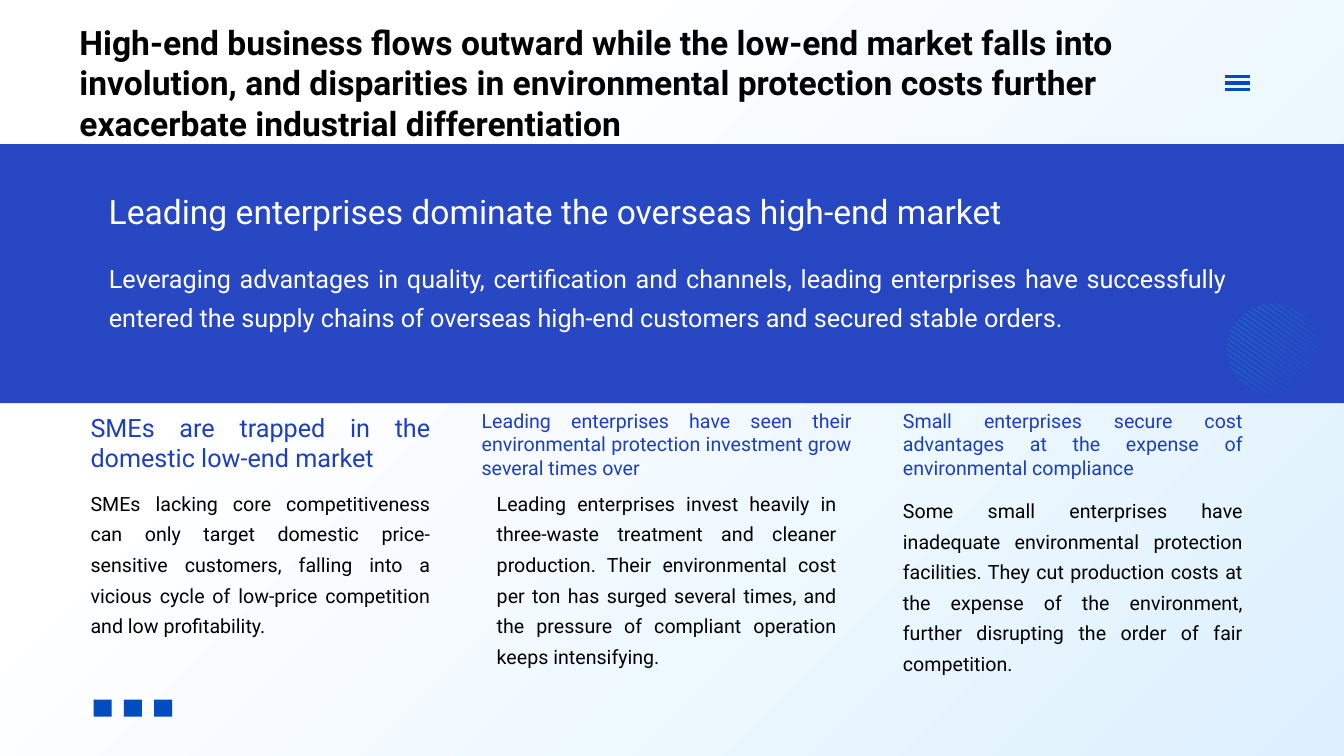
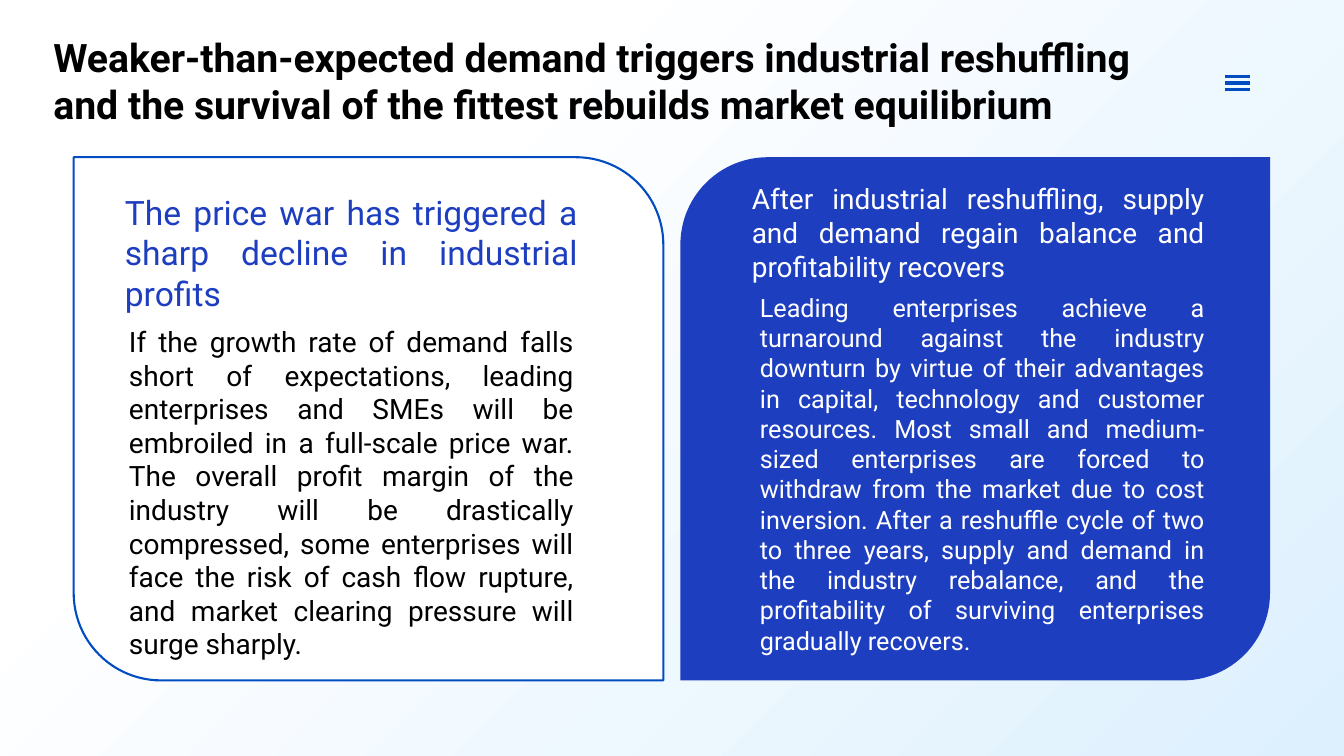
import pptx
import pptx.util
import pptx.dml.color
import pptx.enum.shapes
import pptx.enum.text
import pptx.oxml
import pptx.oxml.ns
import math

Pt = pptx.util.Pt
SHAPES = pptx.enum.shapes.MSO_SHAPE
TEXT = pptx.enum.text

FONT = "Roboto"
NAVY, BLUE, CYAN = "1D3EBF", "004CC0", "00B0F0"
BLACK, WHITE, ICE = "000000", "FFFFFF", "DDF0FE"
JUSTIFY = TEXT.PP_ALIGN.JUSTIFY
MIDDLE = TEXT.MSO_ANCHOR.MIDDLE

# Text formats
TITLE = dict(bold=True, color=BLACK)
HEADING = dict(align=JUSTIFY, anchor=MIDDLE)
BODY = dict(align=JUSTIFY)
OPEN_BODY = dict(BODY, spacing=1.3)

MARKET_TITLE = (
    "High-end business flows outward while the low-end market falls into involution, "
    "and disparities in environmental protection costs further exacerbate "
    "industrial differentiation"
)
BAND_HEADING = "Leading enterprises dominate the overseas high-end market"
BAND_BODY = (
    "Leveraging advantages in quality, certification and channels, leading enterprises "
    "have successfully entered the supply chains of overseas high-end customers and "
    "secured stable orders."
)
# Heading, its size, box top, box height and extra width per side; body and its top, height
COLUMNS = [
    dict(
        heading="SMEs are trapped in the domestic low-end market",
        heading_size=18, heading_top=290.2, heading_height=51.1, widen=0,
        body="SMEs lacking core competitiveness can only target domestic price-sensitive "
             "customers, falling into a vicious cycle of low-price competition and low "
             "profitability.",
        body_top=342.7, body_height=117.4,
    ),
    dict(
        heading="Leading enterprises have seen their environmental protection investment "
                "grow several times over",
        heading_size=14, heading_top=288, heading_height=58.3, widen=10.8,
        body="Leading enterprises invest heavily in three-waste treatment and cleaner "
             "production. Their environmental cost per ton has surged several times, and "
             "the pressure of compliant operation keeps intensifying.",
        body_top=342.7, body_height=139,
    ),
    dict(
        heading="Small enterprises secure cost advantages at the expense of environmental "
                "compliance",
        heading_size=14, heading_top=288, heading_height=58.3, widen=0,
        body="Some small enterprises have inadequate environmental protection facilities. "
             "They cut production costs at the expense of the environment, further "
             "disrupting the order of fair competition.",
        body_top=347.8, body_height=139,
    ),
]
RESHUFFLE_TITLE = [
    "Weaker-than-expected demand triggers industrial reshuffling",
    "and the survival of the fittest rebuilds market equilibrium",
]
# Boxes are left, top, width, height
CARDS = [
    dict(
        left=486, flips=("flipH", "flipV"), fill=NAVY, line=None,
        heading="After industrial reshuffling, supply and demand regain balance and "
                "profitability recovers",
        heading_box=(529.9, 126, 337.7, 79.9),
        heading_format=dict(HEADING, size=20, color=WHITE),
        body="Leading enterprises achieve a turnaround against the industry downturn by "
             "virtue of their advantages in capital, technology and customer resources. "
             "Most small and medium-sized enterprises are forced to withdraw from the "
             "market due to cost inversion. After a reshuffle cycle of two to three years, "
             "supply and demand in the industry rebalance, and the profitability of "
             "surviving enterprises gradually recovers.",
        body_box=(535.7, 205.2, 331.9, 268.6),
        body_format=dict(BODY, size=18, color=WHITE),
    ),
    dict(
        left=52.6, flips=("flipV",), fill=WHITE, line=BLUE,
        heading="The price war has triggered a sharp decline in industrial profits",
        heading_box=(82.1, 133.2, 337.7, 94.3),
        heading_format=dict(HEADING, size=24, color=NAVY),
        body="If the growth rate of demand falls short of expectations, leading enterprises "
             "and SMEs will be embroiled in a full-scale price war. The overall profit "
             "margin of the industry will be drastically compressed, some enterprises will "
             "face the risk of cash flow rupture, and market clearing pressure will surge "
             "sharply.",
        body_box=(85, 228.2, 331.9, 249.8),
        body_format=dict(BODY, size=20, color=BLACK),
    ),
]


def rgb(color):
    return pptx.dml.color.RGBColor.from_string(color)


def set_gradient(properties, stops, angle):
    """Replace the solid fill in properties; stops are (percent, colour, opacity percent)."""
    marks = "".join(
        f'<a:gs pos="{place * 1000}"><a:srgbClr val="{color}">'
        f'<a:alpha val="{opacity * 1000}"/></a:srgbClr></a:gs>'
        for place, color, opacity in stops
    )
    gradient = pptx.oxml.parse_xml(
        f'<a:gradFill rotWithShape="1" {pptx.oxml.ns.nsdecls("a")}><a:gsLst>{marks}</a:gsLst>'
        f'<a:lin ang="{angle * 60000}" scaled="0"/></a:gradFill>'
    )
    solid = properties.find(pptx.oxml.ns.qn("a:solidFill"))
    properties.replace(solid, gradient)


def style_shape(shape, fill, line=None, width=1.5):
    shape.shadow.inherit = False
    shape.fill.solid()
    shape.fill.fore_color.rgb = rgb(fill)
    if line:
        shape.line.color.rgb = rgb(line)
        shape.line.width = Pt(width)
    else:
        shape.line.fill.background()


def add_block(slide, kind, box, fill, line=None):
    block = slide.shapes.add_shape(kind, *map(Pt, box))
    style_shape(block, fill, line)
    return block


def add_text(slide, box, paragraphs, size, color, bold=None, align=None,
             anchor=TEXT.MSO_ANCHOR.TOP, spacing=None):
    frame = slide.shapes.add_textbox(*map(Pt, box)).text_frame
    frame_format = dict(
        word_wrap=True, auto_size=TEXT.MSO_AUTO_SIZE.SHAPE_TO_FIT_TEXT, vertical_anchor=anchor
    )
    for name, value in frame_format.items():
        setattr(frame, name, value)
    for index, words in enumerate(paragraphs):
        paragraph = frame.add_paragraph() if index else frame.paragraphs[0]
        paragraph.alignment = align
        paragraph.line_spacing = spacing
        run = paragraph.add_run()
        run.text = words
        for name, value in dict(name=FONT, size=Pt(size), bold=bold).items():
            setattr(run.font, name, value)
        run.font.color.rgb = rgb(color)


def add_menu_icon(slide):
    for row in range(3):
        y = Pt(54.7 + 4.7 * row)
        bar = slide.shapes.add_connector(
            pptx.enum.shapes.MSO_CONNECTOR.STRAIGHT, Pt(874.8), y, Pt(892.8), y
        )
        bar.line.color.rgb = rgb(BLUE)
        bar.line.width = Pt(2.5)
        bar._element.spPr.append(
            pptx.oxml.parse_xml(f'<a:effectLst {pptx.oxml.ns.nsdecls("a")}/>')
        )


def add_hatched_disc(slide, center_x, center_y, radius, stripes=21, tilt=35):
    """Cut a disc into evenly spaced stripes, drawn level and then tilted."""
    pitch = 2 * radius / stripes
    units = 100  # drawing units in a point
    builder = None
    for stripe in range(stripes):
        middle = (stripe - stripes // 2) * pitch
        upper, lower = middle - pitch / 4, middle + pitch / 4
        reach_up, reach_down = (math.sqrt(radius**2 - edge**2) for edge in (upper, lower))
        corners = [
            ((center_x + x) * units, (center_y + y) * units)
            for x, y in ((-reach_up, upper), (reach_up, upper),
                         (reach_down, lower), (-reach_down, lower))
        ]
        if builder is None:
            builder = slide.shapes.build_freeform(*corners[0], scale=Pt(1) / units)
        else:
            builder.move_to(*corners[0])
        builder.add_line_segments(corners[1:], close=True)
    disc = builder.convert_to_shape()
    style_shape(disc, CYAN)
    set_gradient(disc._element.spPr, [(0, CYAN, 34), (76, CYAN, 3), (100, CYAN, 3)], 0)
    disc.rotation = tilt


def build_market_slide(slide):
    band = add_block(slide, SHAPES.RECTANGLE, (-0.7, 103, 961.9, 185), NAVY)
    band_color = band._element.spPr.find(".//" + pptx.oxml.ns.qn("a:srgbClr"))
    band_color.append(
        pptx.oxml.parse_xml(f'<a:alpha val="95000" {pptx.oxml.ns.nsdecls("a")}/>')
    )
    for index in range(3):
        add_block(slide, SHAPES.RECTANGLE, (66.8 + 21.6 * index, 499.7, 13, 12.2), BLUE)
    add_hatched_disc(slide, 909.4, 249.1, 32.4)
    add_text(slide, (49.7, 12.2, 799.2, 94.3), [MARKET_TITLE], size=24, **TITLE)
    add_menu_icon(slide)
    add_text(slide, (70.6, 132.5, 811.4, 36), [BAND_HEADING], size=24, color=WHITE, **HEADING)
    add_text(slide, (70.6, 177.8, 812.9, 92.2), [BAND_BODY], size=18, color=WHITE, **OPEN_BODY)
    width, step = 257, 290.15
    for index, column in enumerate(COLUMNS):
        left, widen = 57.6 + step * index, column["widen"]
        heading_box = (left - widen, column["heading_top"],
                       width + 2 * widen, column["heading_height"])
        add_text(slide, heading_box, [column["heading"]],
                 size=column["heading_size"], color=NAVY, **HEADING)
        add_text(slide, (left, column["body_top"], width, column["body_height"]),
                 [column["body"]], size=14, color=BLACK, **OPEN_BODY)


def build_reshuffle_slide(slide):
    for card in CARDS:
        panel = add_block(slide, SHAPES.ROUND_2_DIAG_RECTANGLE,
                          (card["left"], 112.3, 421.2, 373.7), card["fill"], card["line"])
        panel.adjustments[0] = 0.167
        panel.adjustments[1] = 0
        for flip in card["flips"]:
            panel._element.spPr.xfrm.set(flip, "1")
    add_text(slide, (31, 20.2, 810.7, 74.9), RESHUFFLE_TITLE, size=28, **TITLE)
    add_menu_icon(slide)
    for card in reversed(CARDS):
        for part in ("heading", "body"):
            add_text(slide, card[part + "_box"], [card[part]], **card[part + "_format"])


def main():
    deck = pptx.Presentation()
    deck.slide_width, deck.slide_height = Pt(960), Pt(540)
    backdrop = deck.slide_master.background.fill
    backdrop.solid()
    backdrop.fore_color.rgb = rgb(WHITE)
    set_gradient(deck.slide_master._element.cSld.bg.bgPr,
                 [(0, WHITE, 100), (28, WHITE, 100), (100, ICE, 100)], 45)
    for build in (build_market_slide, build_reshuffle_slide):
        build(deck.slides.add_slide(deck.slide_layouts[6]))
    deck.save("out.pptx")


if __name__ == "__main__":
    main()
